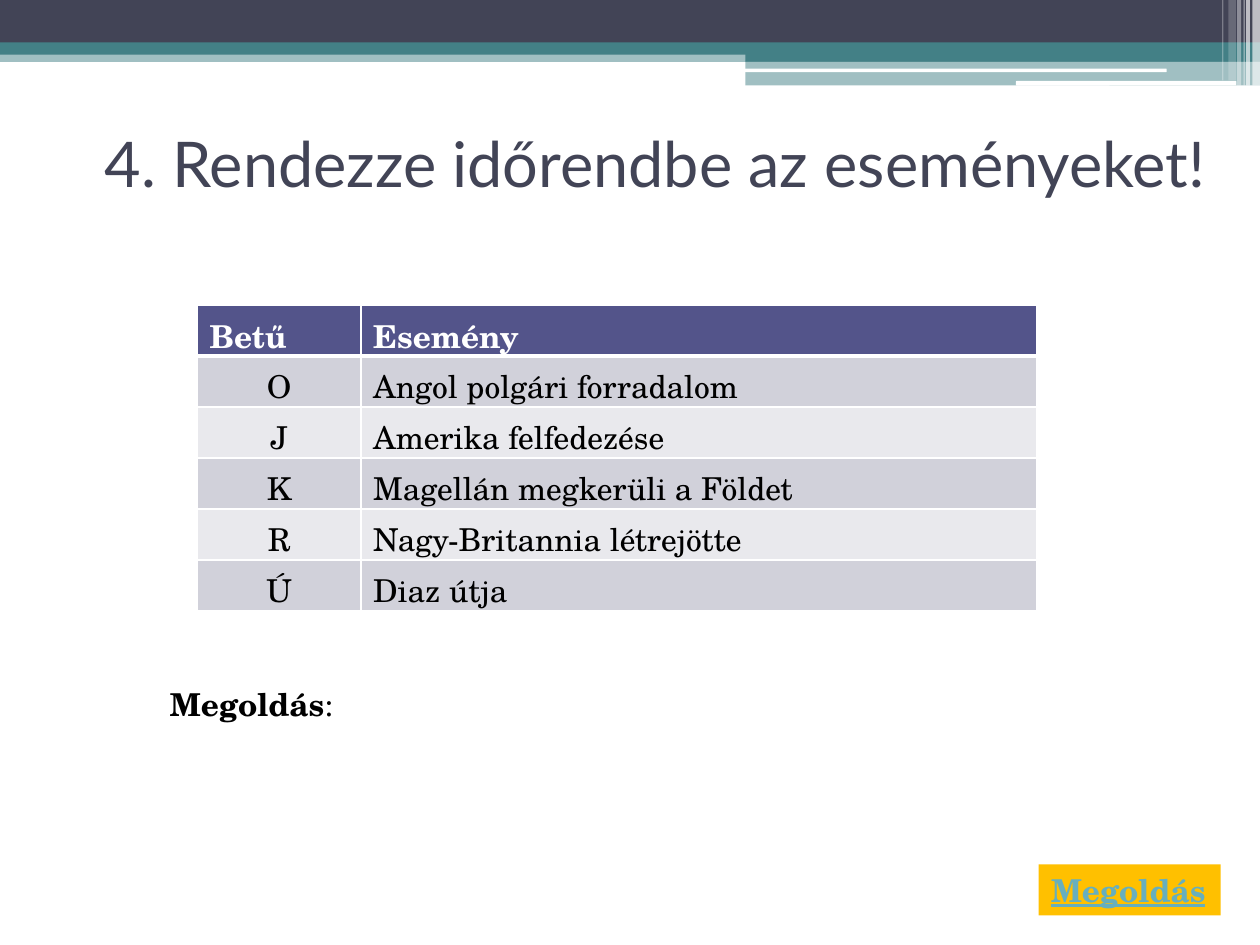
from lxml.etree import SubElement
from pptx import Presentation
from pptx.dml.color import RGBColor
from pptx.enum.shapes import MSO_SHAPE
from pptx.enum.text import MSO_ANCHOR, MSO_AUTO_SIZE, PP_ALIGN
from pptx.oxml.ns import qn
from pptx.util import Pt

WHITE = RGBColor(0xFF, 0xFF, 0xFF)
BLACK = RGBColor(0, 0, 0)
NAVY = RGBColor(0x42, 0x44, 0x56)
TEAL = RGBColor(0x43, 0x80, 0x86)
HEADER = RGBColor(0x53, 0x54, 0x8A)
BAND_DARK = RGBColor(0xD1, 0xD1, 0xDA)
BAND_LIGHT = RGBColor(0xE9, 0xE9, 0xED)
GOLD = RGBColor(0xFF, 0xC0, 0x00)
LINK = RGBColor(0x67, 0xAF, 0xBD)


def add_text(p, text, font="TeX Gyre Schola", size=18, color=BLACK,
             bold=False, underline=False, align=PP_ALIGN.LEFT):
    p.alignment = align
    r = p.add_run()
    r.text = text
    r.font.name = font
    r.font.size = Pt(size)
    r.font.color.rgb = color
    r.font.bold = bold
    r.font.underline = underline


def add_bar(x, y, w, h, color, alpha=100, kind=MSO_SHAPE.RECTANGLE):
    sp = s.shapes.add_shape(kind, Pt(x), Pt(y), Pt(w), Pt(h))
    sp.shadow.inherit = False
    sp.fill.solid()
    sp.fill.fore_color.rgb = color
    sp.line.fill.background()
    if alpha < 100:
        clr = sp._element.spPr.find(qn("a:solidFill"))[0]
        SubElement(clr, qn("a:alpha"), val=str(alpha * 1000))
    return sp


prs = Presentation()
prs.slide_width, prs.slide_height = Pt(720), Pt(540)
s = prs.slides.add_slide(prs.slide_layouts[5])

# Header bands
for x, y, w, h, color, alpha in [
    (0, 28.8, 720, 6.6, TEAL, 50),
    (0, 0, 720, 24.5, NAVY, 100),
    (0, 24.2, 720, 7.1, TEAL, 100),
    (426, 28, 294, 7.2, TEAL, 100),
    (426, 34.6, 294, 14.2, TEAL, 50),
]:
    add_bar(x, y, w, h, color, alpha)

# White rounded lines under the bands
for x, y, w, h in [(425.5, 39.2, 241.2, 2), (580.5, 46.3, 126, 2.6)]:
    add_bar(x, y, w, h, WHITE, kind=MSO_SHAPE.ROUNDED_RECTANGLE)

# Translucent stripes at the right edge
for x, w, h, alpha in [
    (715.7, 4.3, 49, 65), (712.1, 2.2, 49, 65), (710.6, 0.7, 49, 60),
    (707, 2.2, 49, 40), (702, 4.3, 46, 20), (698.4, 0.7, 46, 30),
]:
    add_bar(x, 0, w, h, WHITE, alpha)

# Title
title = s.shapes.title
title.left, title.top, title.width, title.height = Pt(50.4), Pt(50.4), Pt(648), Pt(84.2)
tf = title.text_frame
tf.auto_size = MSO_AUTO_SIZE.NONE
tf.vertical_anchor = MSO_ANCHOR.MIDDLE
add_text(tf.paragraphs[0], "4. Rendezze időrendbe az eseményeket!",
         font="Lato", size=36, color=NAVY, align=PP_ALIGN.CENTER)

# Solution button
button = add_bar(593.5, 494, 104, 29.1, GOLD)
tf = button.text_frame
tf.word_wrap = False
tf.auto_size = MSO_AUTO_SIZE.SHAPE_TO_FIT_TEXT
add_text(tf.paragraphs[0], "Megoldás", color=LINK, bold=True, underline=True)

# Table of events
rows = [
    ("Betű", "Esemény"),
    ("O", "Angol polgári forradalom"),
    ("J", "Amerika felfedezése"),
    ("K", "Magellán megkerüli a Földet"),
    ("R", "Nagy-Britannia létrejötte"),
    ("Ú", "Diaz útja"),
]
table = s.shapes.add_table(len(rows), 2, Pt(112.8), Pt(174.4), Pt(479.5), Pt(175)).table
table.columns[0].width, table.columns[1].width = Pt(93.5), Pt(386)
for i, row in enumerate(rows):
    table.rows[i].height = Pt(29.15)
    header = i == 0
    for j, text in enumerate(row):
        cell = table.cell(i, j)
        cell.vertical_anchor = MSO_ANCHOR.BOTTOM
        cell.margin_left = cell.margin_right = Pt(7)
        cell.margin_bottom = Pt(1)
        centered = j == 0 and not header
        add_text(cell.text_frame.paragraphs[0], text, bold=header,
                 color=WHITE if header else BLACK,
                 align=PP_ALIGN.CENTER if centered else PP_ALIGN.LEFT)
        # Borders go before the fill in tcPr
        tcPr = cell._tc.get_or_add_tcPr()
        widths = {"L": 1, "R": 1, "T": 3 if i == 1 else 1, "B": 3 if header else 1}
        for side, width in widths.items():
            ln = SubElement(tcPr, qn(f"a:ln{side}"), w=str(Pt(width)))
            SubElement(SubElement(ln, qn("a:solidFill")), qn("a:srgbClr"), val=str(WHITE))
        cell.fill.solid()
        cell.fill.fore_color.rgb = HEADER if header else BAND_DARK if i % 2 else BAND_LIGHT

# Answer line
tf = s.shapes.add_textbox(Pt(90), Pt(388), Pt(506), Pt(29.1)).text_frame
tf.word_wrap = True
tf.auto_size = MSO_AUTO_SIZE.SHAPE_TO_FIT_TEXT
add_text(tf.paragraphs[0], "Megoldás", bold=True)
add_text(tf.paragraphs[0], ":")

prs.save("out.pptx")
